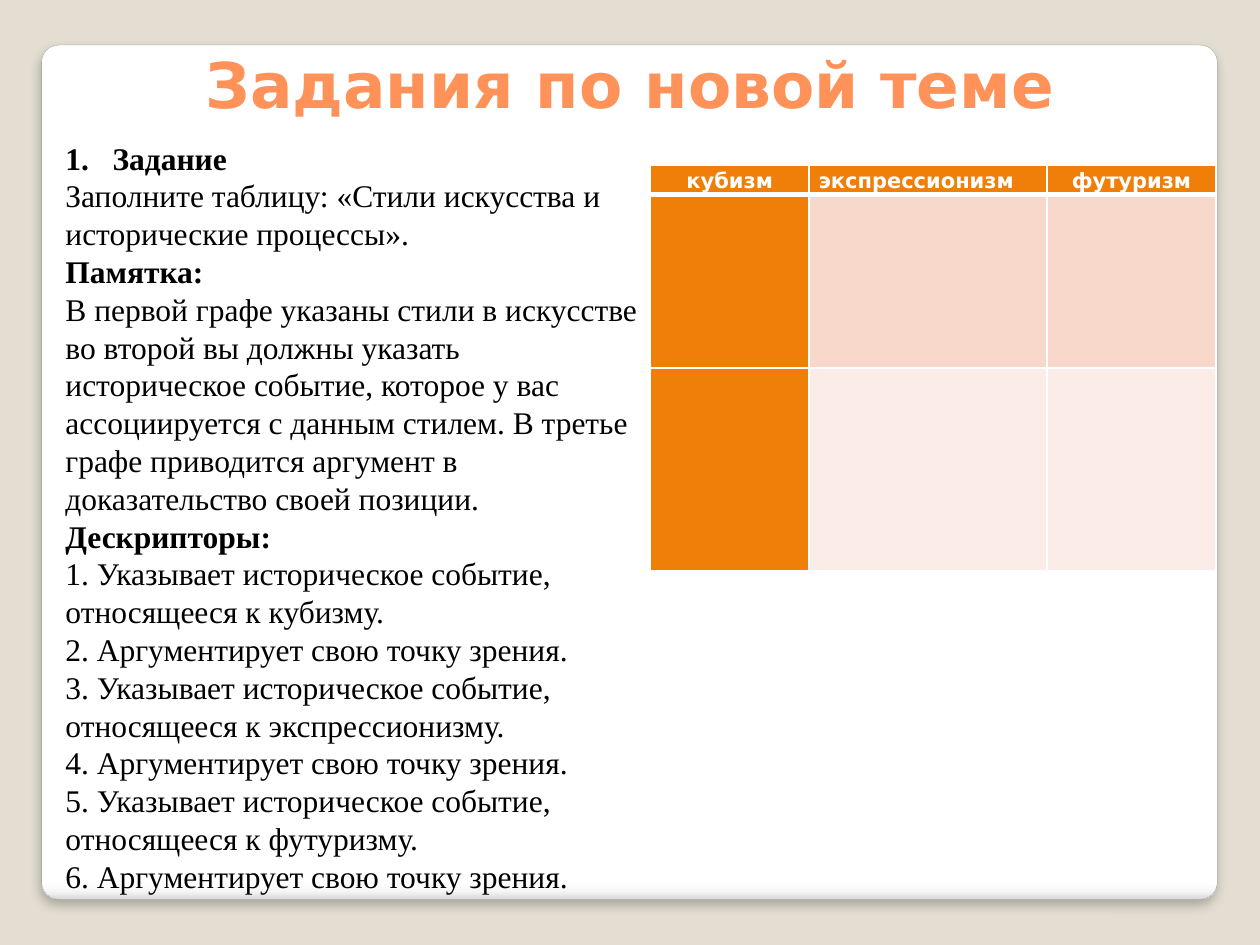
from dataclasses import dataclass

from lxml import etree
from pptx import Presentation
from pptx.dml.color import RGBColor
from pptx.enum.shapes import MSO_SHAPE
from pptx.enum.text import MSO_ANCHOR, MSO_AUTO_SIZE, PP_ALIGN
from pptx.oxml.ns import qn
from pptx.util import Cm, Pt

ROUND = MSO_SHAPE.ROUNDED_RECTANGLE
MIDDLE = MSO_ANCHOR.MIDDLE
GROW = MSO_AUTO_SIZE.SHAPE_TO_FIT_TEXT
LEFT, CENTER = PP_ALIGN.LEFT, PP_ALIGN.CENTER


@dataclass(frozen=True)
class Theme:
    back: str = "E3DED1"
    edge: str = "A4A4A4"
    white: str = "FFFFFF"
    black: str = "000000"
    title: str = "FF9258"
    accent: str = "F07F09"
    bands: tuple = ("F9D8CC", "FCECE7")
    fade: tuple = ((0, "FFFFFF"), (98, "FFFFFF"), (99, "F7F7F7"), (100, "DADADA"))
    sans: str = "DejaVu Sans"
    serif: str = "Times New Roman"
    big: int = 36
    mid: int = 18
    small: int = 12


THEME = Theme()

TASK = [
    ("Задание", True),
    ("Заполните таблицу: «Стили искусства и исторические процессы».", False),
    ("Памятка:", True),
    ("В первой графе указаны стили в искусстве во второй вы должны указать "
     "историческое событие, которое у вас ассоциируется с данным стилем. "
     "В третье графе приводится аргумент в доказательство своей позиции.", False),
    ("Дескрипторы:", True),
    ("1. Указывает историческое событие, относящееся к кубизму.", False),
    ("2. Аргументирует свою точку зрения.", False),
    ("3. Указывает историческое событие, относящееся к экспрессионизму.", False),
    ("4. Аргументирует свою точку зрения.", False),
    ("5. Указывает историческое событие, относящееся к футуризму.", False),
    ("6. Аргументирует свою точку зрения.", False),
]
STYLES = [("кубизм", CENTER), ("экспрессионизм", LEFT), ("футуризм", CENTER)]
COLS = (3.2, 4.8, 3.4)
ROWS = (0.58, 3.5, 4.1)


def rgb(code):
    return RGBColor.from_string(code)


def lengths(box):
    return [Cm(side) for side in box]


def node(parent, tag, **attrs):
    return etree.SubElement(parent, qn(tag), {k: str(v) for k, v in attrs.items()})


def write(para, text, font, size, color, bold=False, align=LEFT, space=None):
    para.alignment = align
    para.line_spacing = space
    run = para.add_run()
    run.text = text
    run.font.name = font
    run.font.size = Pt(size)
    run.font.bold = bold
    run.font.color.rgb = rgb(color)


def add_card(slide, box):
    card = slide.shapes.add_shape(ROUND, *lengths(box))
    card.adjustments[0] = 0.02
    card.line.color.rgb = rgb(THEME.edge)
    card.line.width = Pt(0.16)
    card.fill.gradient()
    card.fill.gradient_angle = 270
    props = card._element.spPr
    stops = props.find(".//" + qn("a:gsLst"))
    for stop in list(stops):
        stops.remove(stop)
    for place, color in THEME.fade:
        node(node(stops, "a:gs", pos=place * 1000), "a:srgbClr", val=color)
    card.shadow.inherit = False
    shade = node(props.find(qn("a:effectLst")), "a:outerShdw", blurRad=Pt(6),
                 dist=Pt(4), dir=5400000, algn="t", rotWithShape=0)
    node(node(shade, "a:srgbClr", val=THEME.black), "a:alpha", val=25000)


def add_title(slide, box, text):
    frame = slide.shapes.add_textbox(*lengths(box)).text_frame
    frame.word_wrap = True
    frame.vertical_anchor = MIDDLE
    write(frame.paragraphs[0], text, THEME.sans, THEME.big, THEME.title,
          bold=True, align=CENTER)


def add_task(slide, box, lines):
    """Place the task text; its first line is numbered."""
    frame = slide.shapes.add_textbox(*lengths(box)).text_frame
    frame.word_wrap = True
    frame.auto_size = GROW
    for i, (text, bold) in enumerate(lines):
        para = frame.add_paragraph() if i else frame.paragraphs[0]
        write(para, text, THEME.serif, THEME.mid, THEME.black, bold=bold)
    props = frame.paragraphs[0]._p.get_or_add_pPr()
    props.set("marL", str(Cm(0.95)))
    props.set("indent", str(Cm(-0.95)))
    node(props, "a:buFont", typeface="+mj-lt")
    node(props, "a:buAutoNum", type="arabicPeriod")


def paint(cell, color, base=1):
    """Give a cell white borders and a fill; base is the lower line's width."""
    props = cell._tc.get_or_add_tcPr()
    for side, width in (("L", 1), ("R", 1), ("T", 1), ("B", base)):
        line = node(props, "a:ln" + side, w=Pt(width))
        node(node(line, "a:solidFill"), "a:srgbClr", val=THEME.white)
    cell.fill.solid()
    cell.fill.fore_color.rgb = rgb(color)
    cell.margin_left = cell.margin_right = Cm(0.19)
    cell.margin_top = cell.margin_bottom = 0


def add_grid(slide, left, top):
    box = (left, top, sum(COLS), sum(ROWS))
    table = slide.shapes.add_table(len(ROWS), len(COLS), *lengths(box)).table
    for col, width in zip(table.columns, COLS):
        col.width = Cm(width)
    for row, height in zip(table.rows, ROWS):
        row.height = Cm(height)
    for i, (text, align) in enumerate(STYLES):
        head = table.cell(0, i)
        paint(head, THEME.accent, base=3)
        write(head.text_frame.paragraphs[0], text, THEME.sans, THEME.small,
              THEME.white, bold=True, align=align, space=1.15)
        for j, band in enumerate(THEME.bands, 1):
            paint(table.cell(j, i), band if i else THEME.accent)


def main():
    deck = Presentation()
    deck.slide_width, deck.slide_height = Cm(25.4), Cm(19.05)
    slide = deck.slides.add_slide(deck.slide_layouts[6])
    slide.background.fill.solid()
    slide.background.fill.fore_color.rgb = rgb(THEME.back)
    add_card(slide, (0.84, 0.91, 23.7, 17.22))
    add_task(slide, (1.07, 2.67, 12.04, 15.65), TASK)
    add_title(slide, (1.27, 0.76, 22.86, 1.83), "Задания по новой теме")
    add_grid(slide, 13.11, 3.33)
    deck.save("out.pptx")


if __name__ == "__main__":
    main()
